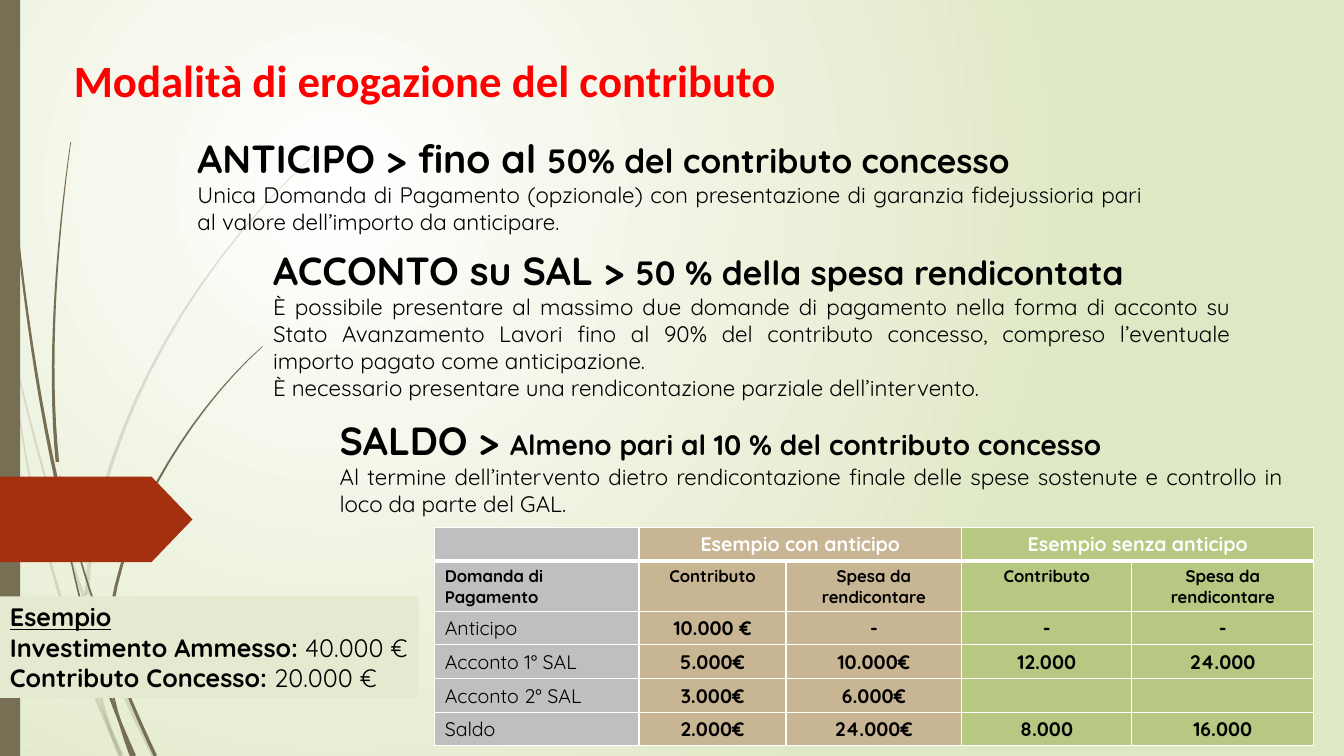
from math import hypot

from lxml import etree
from pptx import Presentation
from pptx.dml.color import RGBColor
from pptx.enum.shapes import MSO_SHAPE
from pptx.enum.text import MSO_ANCHOR, MSO_AUTO_SIZE, PP_ALIGN
from pptx.oxml import parse_xml
from pptx.oxml.ns import nsdecls, qn
from pptx.util import Pt

RECT, ARROW = MSO_SHAPE.RECTANGLE, MSO_SHAPE.PENTAGON
LEFT, CENTER, JUST = PP_ALIGN.LEFT, PP_ALIGN.CENTER, PP_ALIGN.JUSTIFY
MIDDLE, NO_FIT = MSO_ANCHOR.MIDDLE, MSO_AUTO_SIZE.NONE
FONT = "Quicksand"
OLIVE, GRAY, TAN, GREEN = "766F54", "BFBFBF", "C8B594", "B6C882"
BLACK, WHITE = "000000", "FFFFFF"
STEPS = 16

# tip, two pulls, root
PALE = [
    ((0, 209), (24, 318), (50, 424), (110, 540)),
    ((9, 252), (16, 350), (48, 458), (87, 540)),
    ((224.5, 110.5), (124, 203), (66, 325), (62, 425)),
    ((61, 422), (62, 460), (71, 505), (86, 540)),
]
DARK = [
    ((2.5, 0), (4, 118), (19, 247), (41, 346)),
    ((41, 346), (52, 420), (70, 482), (96, 540)),
    ((50.5, 101.5), (40, 176), (34, 262), (41, 330)),
    ((43, 340), (54, 398), (78, 470), (111, 540)),
    ((187.5, 247.5), (133, 296), (77, 388), (78, 460)),
    ((77, 462), (77, 490), (86, 520), (94, 540)),
]
BLOCKS = [
    (134, 92.3, 689, 80, [("ANTICIPO > fino al ", 28), ("50% del contributo concesso", 24)],
     [("Unica Domanda di Pagamento (opzionale) con presentazione di garanzia fidejussioria pari "
       "al valore dell’importo da anticipare.", JUST)]),
    (188, 172.3, 698, 119, [("ACCONTO su SAL > ", 28), ("50 % della spesa rendicontata", 24)],
     [("È possibile presentare al massimo due domande di pagamento nella forma di acconto su "
       "Stato Avanzamento Lavori fino al 90% del contributo concesso, compreso l’eventuale "
       "importo pagato come anticipazione.", JUST),
      ("È necessario presentare una rendicontazione parziale dell’intervento.", LEFT)]),
    (235.5, 293.5, 688, 80, [("SALDO > ", 28), ("Almeno pari al 10 % del contributo concesso", 20)],
     [("Al termine dell’intervento dietro rendicontazione finale delle spese sostenute e controllo in "
       "loco da parte del GAL.", JUST)]),
]
ROWS = [
    ["", "Esempio con anticipo", "", "Esempio senza anticipo", ""],
    ["Domanda di Pagamento"] + ["Contributo", "Spesa da rendicontare"] * 2,
    ["Anticipo", "10.000 €", "-", "-", "-"],
    ["Acconto 1° SAL", "5.000€", "10.000€", "12.000", "24.000"],
    ["Acconto 2° SAL", "3.000€", "6.000€", "", ""],
    ["Saldo", "2.000€", "24.000€", "8.000", "16.000"],
]
WIDE, HIGH = (146, 105, 125.5, 121.5, 130), (24, 36, 24, 24, 24, 24)
TONES = (GRAY, TAN, TAN, GREEN, GREEN)


def rgb(code):
    return RGBColor.from_string(code)


def paint(shape, color):
    shape.shadow.inherit = False
    shape.fill.solid()
    shape.fill.fore_color.rgb = rgb(color)
    shape.line.fill.background()


def style(par, size=None, bold=None, color=BLACK, name=FONT, align=LEFT):
    par.alignment = align
    par.font.name, par.font.bold = name, bold
    par.font.color.rgb = rgb(color)
    if size:
        par.font.size = Pt(size)


def add_back(slide):
    fill = slide.background.fill
    fill.gradient()
    for stop, color in zip(fill.gradient_stops, (WHITE, "DFE8C4")):
        stop.color.rgb = rgb(color)
    grad = slide._element.find(".//" + qn("a:gradFill"))
    grad.replace(grad.find(qn("a:lin")), parse_xml(
        f'<a:path {nsdecls("a")} path="circle">'
        '<a:fillToRect l="50000" t="50000" r="100000" b="100000"/></a:path>'))


def curve(a, b, c, d, t):
    s = 1 - t
    return s**3 * a + 3 * s * s * t * b + 3 * s * t * t * c + t**3 * d


def slope(a, b, c, d, t):
    s = 1 - t
    return s * s * (b - a) + 2 * s * t * (c - b) + t * t * (d - c)


def add_stem(slide, stem, thick, alpha):
    xs, ys = zip(*stem)
    near, far = [], []
    for step in range(STEPS + 1):
        t = step / STEPS
        x, y = curve(*xs, t), curve(*ys, t)
        dx, dy = slope(*xs, t), slope(*ys, t)
        half = thick * (0.2 + 0.8 * t) / 2 / hypot(dx, dy)
        near.append((Pt(x + dy * half), Pt(y - dx * half)))
        far.append((Pt(x - dy * half), Pt(y + dx * half)))
    edge = near + far[::-1]
    form = slide.shapes.build_freeform(*edge[0], scale=1.0)
    form.add_line_segments(edge[1:], close=True)
    leaf = form.convert_to_shape()
    paint(leaf, OLIVE)
    if alpha < 100:
        tone = leaf._element.spPr.find(".//" + qn("a:srgbClr"))
        etree.SubElement(tone, qn("a:alpha"), val=str(alpha * 1000))


def add_box(slide, kind, x, y, w, h, color):
    box = slide.shapes.add_shape(kind, Pt(x), Pt(y), Pt(w), Pt(h))
    paint(box, color)
    return box


def add_title(slide, text):
    title = slide.shapes.title
    title.left, title.top, title.width, title.height = Pt(45.5), Pt(34), Pt(914), Pt(46)
    frame = title.text_frame
    frame.text = text
    frame.auto_size, frame.vertical_anchor = NO_FIT, MIDDLE
    style(frame.paragraphs[0], 32, True, "FF0000", "Calibri")


def add_block(slide, x, y, w, h, head, body):
    frame = slide.shapes.add_textbox(Pt(x), Pt(y), Pt(w), Pt(h)).text_frame
    frame.word_wrap = True
    par = frame.paragraphs[0]
    style(par, bold=True)
    for text, size in head:
        run = par.add_run()
        run.text, run.font.size = text, Pt(size)
    for text, align in body:
        par = frame.add_paragraph()
        par.text = text
        style(par, 16, False, align=align)


def add_note(slide):
    frame = add_box(slide, RECT, 0, 426, 299, 72.5, "E3EACF").text_frame
    frame.word_wrap, frame.vertical_anchor = True, MIDDLE
    head = frame.paragraphs[0]
    head.text = "Esempio"
    style(head, 18, True)
    head.font.underline = True
    for label, value in (("Investimento Ammesso: ", "40.000 €"), ("Contributo Concesso: ", "20.000 €")):
        par = frame.add_paragraph()
        style(par, 18)
        for text, bold in ((label, True), (value, False)):
            run = par.add_run()
            run.text, run.font.bold = text, bold


def add_edges(cell, top, base):
    props = cell._tc.get_or_add_tcPr()
    for i, (side, size) in enumerate((("L", 1), ("R", 1), ("T", top), ("B", base))):
        props.insert(i, parse_xml(
            f'<a:ln{side} {nsdecls("a")} w="{Pt(size)}"><a:solidFill>'
            f'<a:srgbClr val="{WHITE}"/></a:solidFill></a:ln{side}>'))


def fill_cell(cell, text, r, c):
    cell.fill.solid()
    cell.fill.fore_color.rgb = rgb(TONES[c])
    add_edges(cell, 3 if r == 1 else 1, 3 if r == 0 else 1)
    par = cell.text_frame.paragraphs[0]
    par.text = text
    style(par, 12 if r == 1 else 14, r < 2 or c > 0,
          BLACK if r else WHITE, align=CENTER if c else LEFT)
    if not text:
        etree.SubElement(par._p, qn("a:endParaRPr"), sz="1400")


def add_grid(slide):
    grid = slide.shapes.add_table(len(ROWS), len(WIDE), Pt(310.5), Pt(376.5),
                                  Pt(sum(WIDE)), Pt(sum(HIGH))).table
    grid.first_row = grid.horz_banding = False
    for col, size in zip(grid.columns, WIDE):
        col.width = Pt(size)
    for r, row in enumerate(ROWS):
        grid.rows[r].height = Pt(HIGH[r])
        for c, text in enumerate(row):
            fill_cell(grid.cell(r, c), text, r, c)
    for c in (1, 3):
        grid.cell(0, c).merge(grid.cell(0, c + 1))


def main():
    deck = Presentation()
    deck.slide_width, deck.slide_height = Pt(960), Pt(540)
    slide = deck.slides.add_slide(deck.slide_layouts[5])
    add_back(slide)
    for stems, thick, alpha in ((PALE, 3, 20), (DARK, 2.5, 100)):
        for stem in stems:
            add_stem(slide, stem, thick, alpha)
    add_box(slide, RECT, 0, 0, 14.4, 540, OLIVE)
    arrow = add_box(slide, ARROW, 0, 340.5, 137.5, 61, "A53010")
    arrow.adjustments[0] = 0.48
    add_title(slide, "Modalità di erogazione del contributo")
    for block in BLOCKS:
        add_block(slide, *block)
    add_note(slide)
    add_grid(slide)
    deck.save("out.pptx")


if __name__ == "__main__":
    main()
